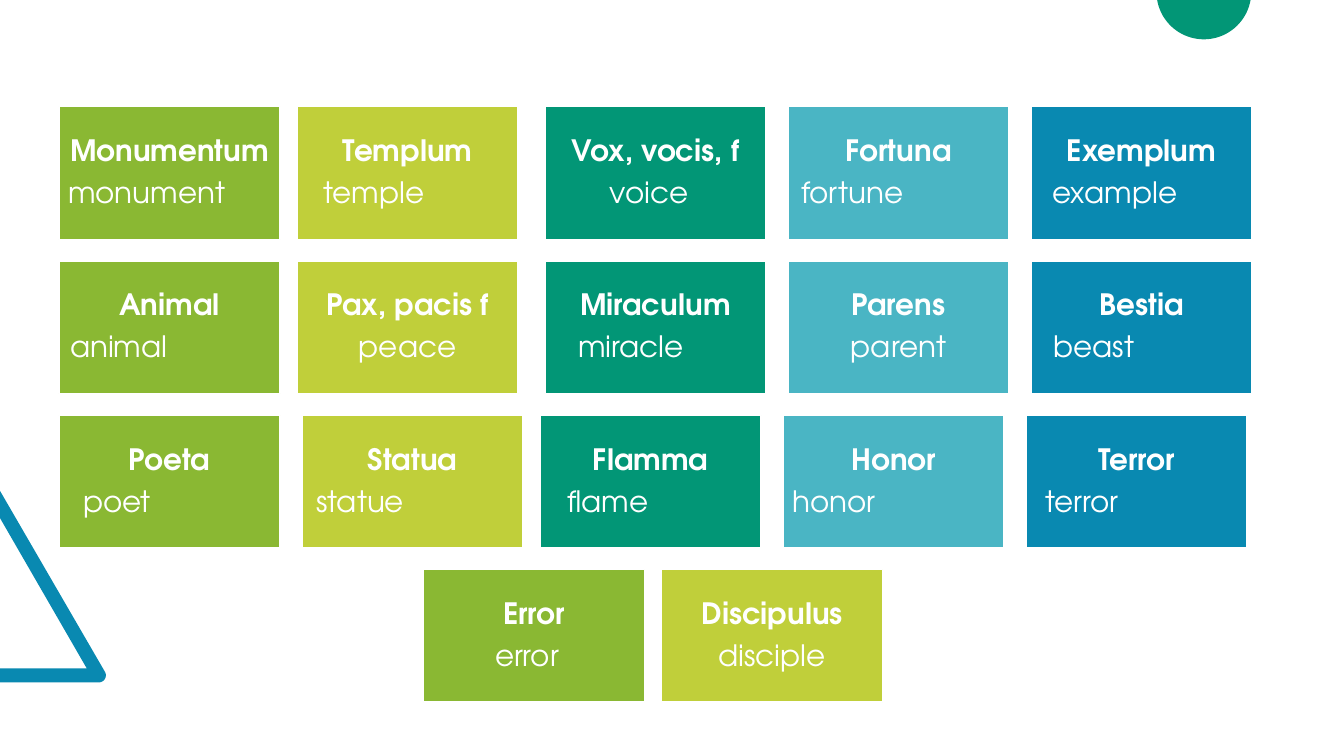
from math import cos, radians, sin

from pptx import Presentation
from pptx.dml.color import RGBColor
from pptx.enum.shapes import MSO_SHAPE
from pptx.enum.text import MSO_ANCHOR, PP_ALIGN
from pptx.util import Inches, Pt

SLIDE_W, SLIDE_H = 13.33, 7.5
LEFT, TOP = 0.585, 1.06
COL_STEP, ROW_STEP = 2.41, 1.53
CARD_W, CARD_H = 0.91, 0.86
WHITE, BLUE, GREEN = "FFFFFF", "0989B1", "029676"
COLORS = ["8AB833", "C0CF3A", GREEN, "4AB5C4", BLUE]
FONT = {"name": "TeX Gyre Adventor", "size": Pt(21)}
FRAME = {
    "word_wrap": True,
    "vertical_anchor": MSO_ANCHOR.MIDDLE,
    "margin_left": Inches(0.09),
    "margin_right": Inches(0.09),
    "margin_top": Inches(0.09),
    "margin_bottom": Inches(0.09),
}
SPACING = {"line_spacing": 0.9, "space_after": Pt(7.35)}

# Each row: column positions, then (Latin, English, indent); None centres.
ROWS = [
    ([0, 0.98, 2, 3, 4], [
        ("Monumentum", "monument", 0), ("Templum", "temple", 0.17),
        ("Vox, vocis, f", "voice", 0.55), ("Fortuna", "fortune", 0.04),
        ("Exemplum", "example", 0.12)]),
    ([0, 0.98, 2, 3, 4], [
        ("Animal", "animal", 0.02), ("Pax, pacis f", "peace", None),
        ("Miraculum", "miracle", 0.24), ("Parens", "parent", None),
        ("Bestia", "beast", 0.13)]),
    ([0, 1, 1.98, 2.98, 3.98], [
        ("Poeta", "poet", 0.15), ("Statua", "statue", 0.05),
        ("Flamma", "flame", 0.18), ("Honor", "honor", 0),
        ("Terror", "terror", 0.1)]),
    ([1.5, 2.48], [
        ("Error", "error", 0.62), ("Discipulus", "disciple", None)]),
]


def rgb(color):
    return RGBColor.from_string(color)


def apply(obj, values):
    for name, value in values.items():
        setattr(obj, name, value)


def paint(sp, color):
    sp.shadow.inherit = False
    sp.fill.solid()
    sp.fill.fore_color.rgb = rgb(color)


def arc(cx, cy, radius, start, end, steps=40):
    angles = [radians(start + (end - start) * i / steps) for i in range(steps + 1)]
    return [(cx + radius * cos(a), cy + radius * sin(a)) for a in angles]


def add_outline(s, points, color):
    (x, y), *rest = [(Inches(px), Inches(py)) for px, py in points]
    builder = s.shapes.build_freeform(x, y)
    builder.add_line_segments(rest, close=True)
    sp = builder.convert_to_shape()
    paint(sp, color)
    sp.line.fill.background()


def write(p, text, bold, indent=None):
    apply(p, SPACING)
    p.alignment = PP_ALIGN.CENTER
    if indent is not None:
        p.alignment = PP_ALIGN.LEFT
        p._p.get_or_add_pPr().set("marL", str(Inches(indent)))
    r = p.add_run()
    r.text = text
    apply(r.font, {**FONT, "bold": bold})
    r.font.color.rgb = rgb(WHITE)


def add_card(s, col, row, color, latin, english, indent):
    sp = s.shapes.add_shape(
        MSO_SHAPE.RECTANGLE,
        Inches(LEFT + col * COL_STEP), Inches(TOP + row * ROW_STEP),
        Inches(CARD_W * COL_STEP), Inches(CARD_H * ROW_STEP))
    paint(sp, color)
    sp.line.color.rgb = rgb(WHITE)
    sp.line.width = Pt(1)
    tf = sp.text_frame
    apply(tf, FRAME)
    write(tf.paragraphs[0], latin, True)
    write(tf.add_paragraph(), english, False, indent)


def main():
    prs = Presentation()
    prs.slide_width, prs.slide_height = Inches(SLIDE_W), Inches(SLIDE_H)
    s = prs.slides.add_slide(prs.slide_layouts[6])
    triangle = [(0, 6.77), (0, 6.63), (0.86, 6.63), (0, 5.14), (0, 4.87)]
    add_outline(s, triangle + arc(0.98, 6.7, 0.07, -30, 90), BLUE)
    add_outline(s, arc(11.94, -0.08, 0.47, 9.8, 170.2), GREEN)
    for row, (cols, words) in enumerate(ROWS):
        for col, color, word in zip(cols, COLORS, words):
            add_card(s, col, row, color, *word)
    prs.save("out.pptx")


if __name__ == "__main__":
    main()
